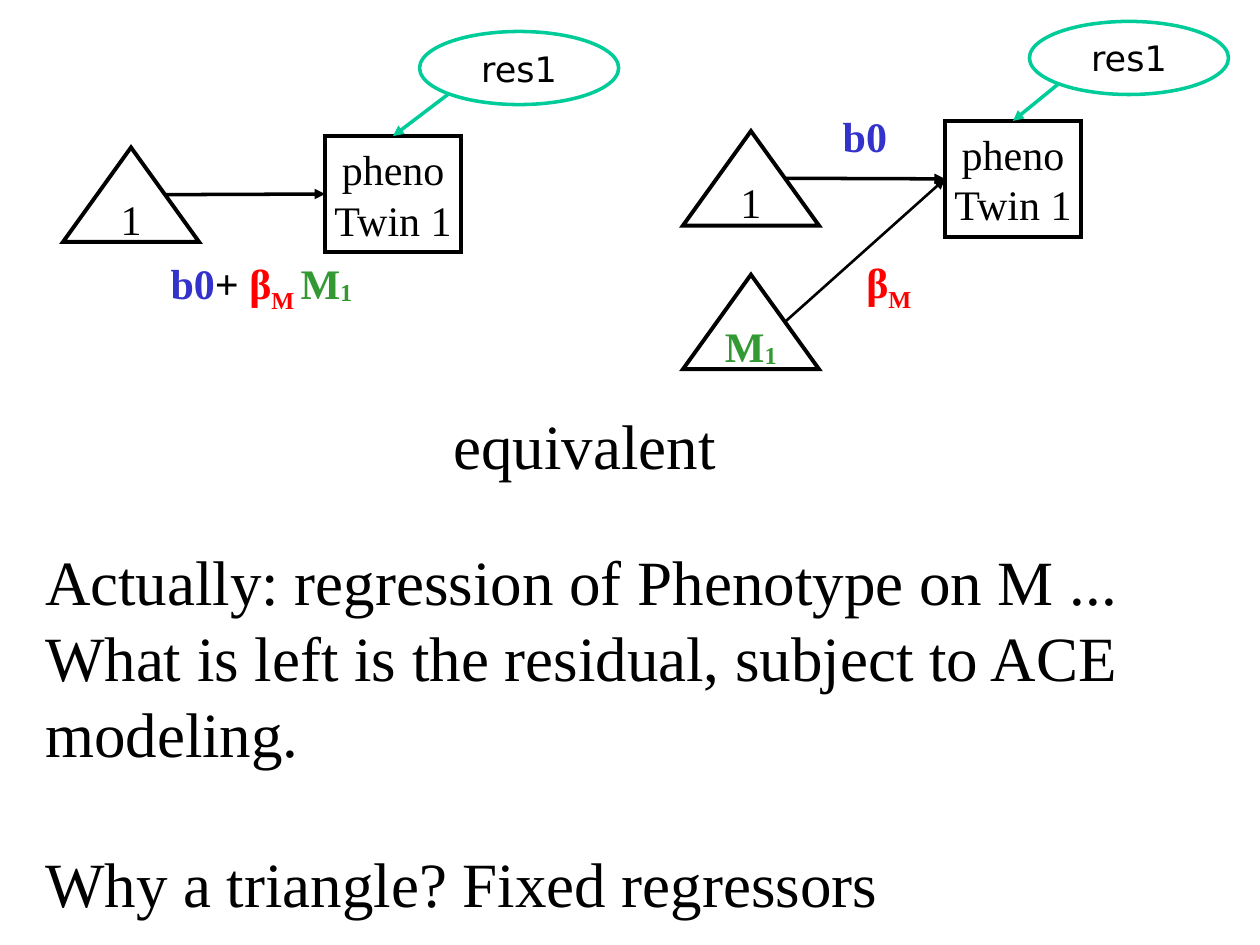
from dataclasses import dataclass

from lxml.etree import SubElement
from pptx import Presentation
from pptx.dml.color import RGBColor
from pptx.enum.shapes import MSO_CONNECTOR as Connector, MSO_SHAPE as Shape
from pptx.enum.text import MSO_ANCHOR as Anchor, MSO_AUTO_SIZE as AutoSize, PP_ALIGN as Align
from pptx.oxml.ns import qn
from pptx.util import Inches, Pt


@dataclass(frozen=True)
class Theme:
    black: str = "000000"
    white: str = "FFFFFF"
    blue: str = "3333CC"
    red: str = "FF0000"
    green: str = "339933"
    teal: str = "00CC99"
    serif: str = "Times New Roman"
    sans: str = "DejaVu Sans"
    body: int = 36
    label: int = 24
    residual: int = 20


THEME = Theme()
BOX_SIZE = (1.08, 0.92)
TRIANGLE_SIZE = (1.08, 0.75)
ELLIPSE_SIZE = (1.58, 0.58)
TOP, LEFT = 0, 1


def span(text, color=THEME.black, bold=False, base=0):
    return text, color, bold, base


def write(frame, paragraphs, points=THEME.label, font=THEME.serif, align=Align.CENTER):
    """Fill a text frame from lists of spans, one list a paragraph."""
    for index, spans in enumerate(paragraphs):
        para = frame.add_paragraph() if index else frame.paragraphs[0]
        para.alignment = align
        for text, color, bold, base in spans:
            run = para.add_run()
            run.text = text
            for name, value in {"size": Pt(points), "name": font, "bold": bold}.items():
                setattr(run.font, name, value)
            run.font.color.rgb = RGBColor.from_string(color)
            if base:
                run.font._element.set("baseline", str(base * 1000))


def set_line(item, color, width):
    item.line.color.rgb = RGBColor.from_string(color)
    item.line.width = Pt(width)


def add_node(page, kind, left, top, size, paragraphs, line=THEME.black, width=2.25,
             wrap=False, **text_format):
    node = page.shapes.add_shape(kind, *map(Inches, (left, top, *size)))
    node.shadow.inherit = False
    node.fill.solid()
    node.fill.fore_color.rgb = RGBColor.from_string(THEME.white)
    set_line(node, line, width)
    SubElement(node.line._ln, qn("a:miter"), lim="800000")
    frame = node.text_frame
    frame.word_wrap = wrap
    frame.vertical_anchor = Anchor.MIDDLE
    write(frame, paragraphs, **text_format)
    return node


def add_triangle(page, left, top, spans):
    return add_node(page, Shape.ISOSCELES_TRIANGLE, left, top, TRIANGLE_SIZE, [spans])


def add_phenotype(page, left, top):
    return add_node(page, Shape.RECTANGLE, left, top, BOX_SIZE,
                    [[span("pheno")], [span("Twin 1")]], width=2.5)


def add_residual(page, left, top, target):
    ellipse = add_node(page, Shape.OVAL, left, top, ELLIPSE_SIZE, [[span("res1")]],
                       line=THEME.teal, width=2, wrap=True,
                       points=THEME.residual, font=THEME.sans)
    diagonal = 0.5 ** 1.5
    start = (ellipse.left + ellipse.width * (0.5 - diagonal),
             ellipse.top + ellipse.height * (0.5 + diagonal))
    add_arrow(page, start, target, TOP, THEME.teal)


def add_arrow(page, start, target, side, color=THEME.black, width=2):
    """Draw an arrow from a point to the middle of a box side."""
    x, y = map(int, start)
    arrow = page.shapes.add_connector(Connector.STRAIGHT, x, y, x, y)
    arrow.end_connect(target, side)
    set_line(arrow, color, width)
    SubElement(arrow.line._ln, qn("a:tailEnd"), type="triangle")
    SubElement(arrow._element.spPr, qn("a:effectLst"))


def add_path(page, triangle, target, width=2):
    """Draw an arrow from the middle of a triangle's right edge to a box."""
    start = (triangle.left + triangle.width * 0.75, triangle.top + triangle.height / 2)
    add_arrow(page, start, target, LEFT, width=width)


def add_text(page, area, paragraphs, wrap=True, anchor=Anchor.TOP, **text_format):
    box = page.shapes.add_textbox(*map(Inches, area))
    frame = box.text_frame
    settings = {"word_wrap": wrap, "vertical_anchor": anchor,
                "auto_size": AutoSize.SHAPE_TO_FIT_TEXT}
    for name, value in settings.items():
        setattr(frame, name, value)
    write(frame, paragraphs, **text_format)
    return frame


def add_combined_model(page):
    phenotype = add_phenotype(page, 2.58, 1.08)
    constant = add_triangle(page, 0.5, 1.17, [span("1")])
    add_path(page, constant, phenotype)
    add_text(page, (1.18, 2.02, 1.79, 0.5), [[
        span("b0", THEME.blue, True), span("+", bold=True),
        span(" β", THEME.red, True), span("M ", THEME.red, True, -25),
        span("M", THEME.green, True), span("1", THEME.green, True, -6),
    ]], anchor=Anchor.MIDDLE)
    add_residual(page, 3.33, 0.25, phenotype)


def add_separate_model(page):
    phenotype = add_phenotype(page, 7.5, 0.96)
    constant = add_triangle(page, 5.42, 1.04, [span("1")])
    add_path(page, constant, phenotype)
    add_text(page, (6.16, 2.01, 1.79, 0.5),
             [[span("β", THEME.red, True), span("M", THEME.red, True, -25)]],
             anchor=Anchor.MIDDLE)
    add_text(page, (6.59, 0.83, 0.56, 0.5), [[span("b0", THEME.blue, True)]],
             wrap=False, align=Align.LEFT)
    moderator = add_triangle(page, 5.42, 2.18, [
        span("M", THEME.green, True), span("1", THEME.green, True, -6)])
    add_path(page, moderator, phenotype, width=1.5)
    add_residual(page, 8.17, 0.17, phenotype)


def add_explanation(page):
    body = {"points": THEME.body, "align": Align.LEFT}
    add_text(page, (3.5, 3.18, 2.31, 0.71), [[span("equivalent")]], wrap=False, **body)
    frame = add_text(page, (0.26, 4.26, 9.75, 3.13), [
        [span("Actually: regression of Phenotype on M ...")],
        [span("What is left is the residual, subject to ACE modeling.")],
        [span("Why a triangle? Fixed regressors")],
    ], **body)
    frame.paragraphs[-1].space_before = Pt(43)


def main():
    deck = Presentation()
    deck.slide_width, deck.slide_height = Inches(10), Inches(7.5)
    page = deck.slides.add_slide(deck.slide_layouts[6])
    add_combined_model(page)
    add_separate_model(page)
    add_explanation(page)
    deck.save("out.pptx")


if __name__ == "__main__":
    main()
